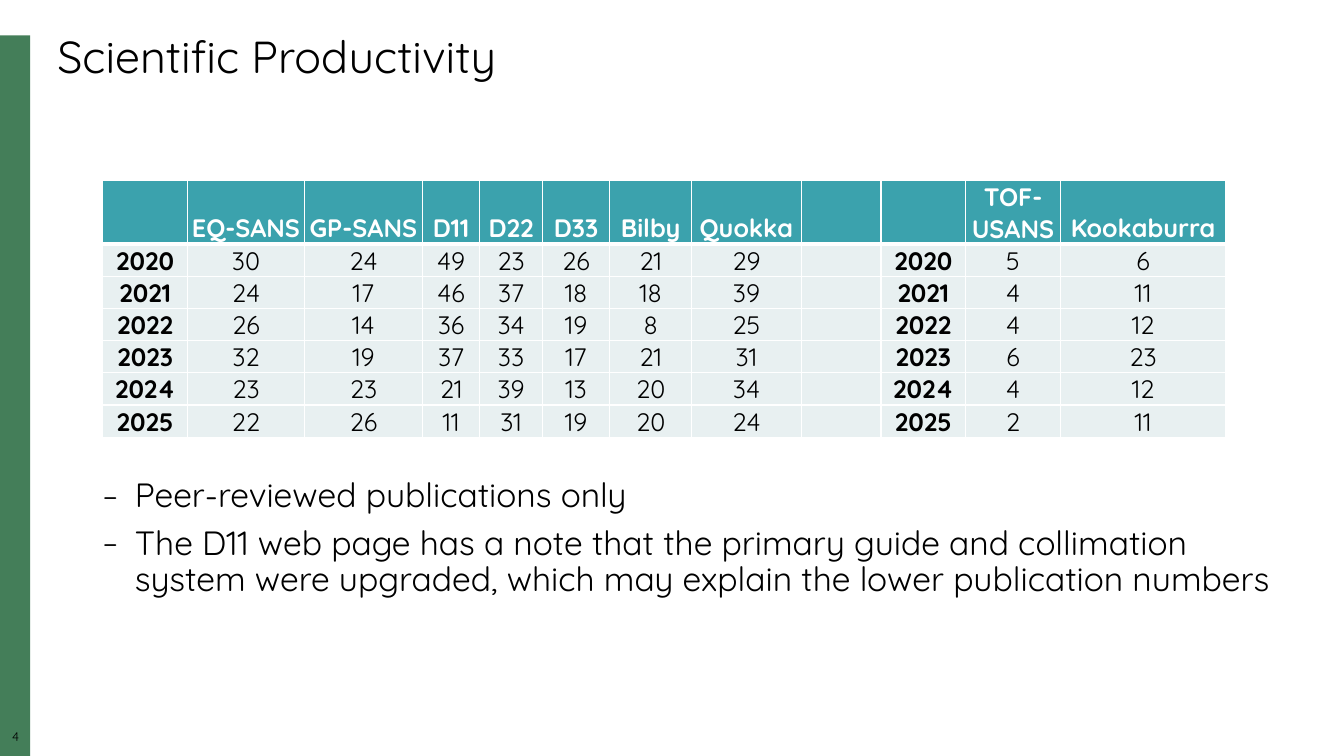
from pptx import Presentation
from pptx.dml.color import RGBColor
from pptx.enum.shapes import MSO_SHAPE
from pptx.enum.text import MSO_ANCHOR, PP_ALIGN
from pptx.oxml import parse_xml
from pptx.oxml.ns import nsdecls
from pptx.util import Inches, Pt

FONT = "Quicksand"
GREEN = RGBColor(0x44, 0x7E, 0x59)
TEAL = RGBColor(0x3B, 0xA2, 0xAD)
PALE = RGBColor(0xE8, 0xF0, 0xF1)
BLACK = RGBColor(0, 0, 0)
WHITE = RGBColor(0xFF, 0xFF, 0xFF)


def style(p, size, color=BLACK, bold=False):
    for r in p.runs:
        r.font.name = FONT
        r.font.size = Pt(size)
        r.font.color.rgb = color
        r.font.bold = bold


def add_text(s, left, top, width, height, lines, size):
    tf = s.shapes.add_textbox(Inches(left), Inches(top), Inches(width), Inches(height)).text_frame
    tf.word_wrap = True
    tf.text = "\n".join(lines)
    for p in tf.paragraphs:
        p.line_spacing = 0.9
        style(p, size)
    return tf


prs = Presentation()
prs.slide_width, prs.slide_height = Inches(13.33), Inches(7.5)
s = prs.slides.add_slide(prs.slide_layouts[6])

# Side bar and page number
bar = s.shapes.add_shape(MSO_SHAPE.RECTANGLE, 0, Inches(0.35), Inches(0.3), Inches(7.15))
bar.shadow.inherit = False
bar.fill.solid()
bar.fill.fore_color.rgb = GREEN
bar.line.fill.background()

tf = add_text(s, 0, 7.25, 0.31, 0.17, ["4"], 9)
tf.margin_left = tf.margin_right = tf.margin_top = tf.margin_bottom = 0
tf.paragraphs[0].alignment = PP_ALIGN.CENTER

# Title
add_text(s, 0.47, 0.3, 12.5, 0.59, ["Scientific Productivity"], 32)

# Notes below the table
notes = [
    "Peer-reviewed publications only",
    "The D11 web page has a note that the primary guide and collimation system "
    "were upgraded, which may explain the lower publication numbers",
]
tf = add_text(s, 0.49, 4.7, 12.5, 1.78, notes, 24)
for i, p in enumerate(tf.paragraphs):
    p.level = 1
    pPr = p._p.get_or_add_pPr()
    pPr.set("marL", str(Inches(0.75)))
    pPr.set("indent", str(-Inches(0.32)))
    for bullet in (f'<a:buClr {nsdecls("a")}><a:srgbClr val="{BLACK}"/></a:buClr>',
                   f'<a:buSzPct {nsdecls("a")} val="90000"/>',
                   f'<a:buFont {nsdecls("a")} typeface="{FONT}"/>',
                   f'<a:buChar {nsdecls("a")} char="–"/>'):
        pPr.append(parse_xml(bullet))
    if i:
        p.space_before = Pt(8)

# Publications per instrument and year
rows = [
    ["", "EQ-SANS", "GP-SANS", "D11", "D22", "D33", "Bilby", "Quokka",
     "", "", "TOF-USANS", "Kookaburra"],
    [2020, 30, 24, 49, 23, 26, 21, 29, "", 2020, 5, 6],
    [2021, 24, 17, 46, 37, 18, 18, 39, "", 2021, 4, 11],
    [2022, 26, 14, 36, 34, 19, 8, 25, "", 2022, 4, 12],
    [2023, 32, 19, 37, 33, 17, 21, 31, "", 2023, 6, 23],
    [2024, 23, 23, 21, 39, 13, 20, 34, "", 2024, 4, 12],
    [2025, 22, 26, 11, 31, 19, 20, 24, "", 2025, 2, 11],
]
col_widths = [0.84, 1.16, 1.17, 0.57, 0.62, 0.67, 0.81, 1.09, 0.79, 0.84, 0.94, 1.64]
YEAR_COLS = (0, 9)

table = s.shapes.add_table(len(rows), len(col_widths), Inches(1.02), Inches(1.79),
                           Inches(11.15), Inches(2.55)).table
table.horz_banding = False
for col, width in zip(table.columns, col_widths):
    col.width = Inches(width)

for i, values in enumerate(rows):
    header = i == 0
    table.rows[i].height = Inches(0.63 if header else 0.32)
    for j, value in enumerate(values):
        cell = table.cell(i, j)
        cell.text = str(value)
        cell.vertical_anchor = MSO_ANCHOR.BOTTOM
        cell.margin_left = cell.margin_right = cell.margin_top = Inches(0.01)
        cell.margin_bottom = 0
        p = cell.text_frame.paragraphs[0]
        p.alignment = PP_ALIGN.CENTER
        style(p, 18, WHITE if header else BLACK, header or j in YEAR_COLS)

        # White rules, thicker under the header
        tcPr = cell._tc.get_or_add_tcPr()
        for side in "LRTB":
            thick = (i, side) in ((0, "B"), (1, "T"))
            tcPr.append(parse_xml(
                f'<a:ln{side} {nsdecls("a")} w="{Pt(3 if thick else 1)}">'
                f'<a:solidFill><a:srgbClr val="{WHITE}"/></a:solidFill></a:ln{side}>'))
        cell.fill.solid()
        cell.fill.fore_color.rgb = TEAL if header else PALE

prs.save("out.pptx")
